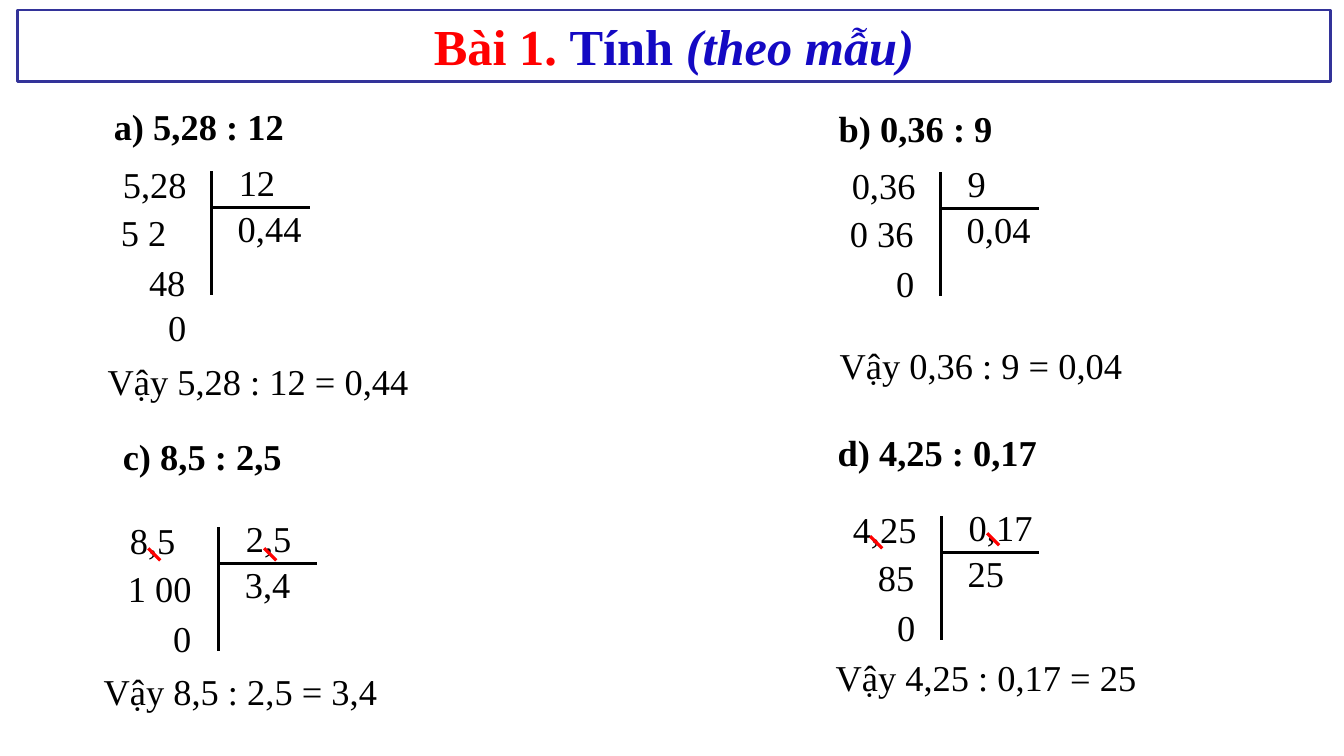
from lxml.etree import SubElement
from pptx import Presentation
from pptx.dml.color import RGBColor
from pptx.enum.shapes import MSO_CONNECTOR
from pptx.enum.text import MSO_ANCHOR, MSO_AUTO_SIZE, PP_ALIGN
from pptx.oxml.ns import qn
from pptx.util import Inches, Pt

FONT = "Times New Roman"
COLORS = {"ink": "000000", "red": "FF0000", "blue": "1409C3",
          "frame": "333399", "white": "FFFFFF"}

# Offsets from the top of the upright bar
ROW_TOPS = (0.34, 0.83, 1.28)
BAR_LONG, BAR_WIDE, BAR_DROP = 1.23, 0.97, 0.36
TICK = 0.12

# Each sum: heading, bar top, dividend, divisor, quotient,
# rows (text, offset from bar), ticks (offsets from bar), answer
SUMS = [
    {"head": ("a) 5,28 : 12", 1.03, 0.98, 3.45), "bar": (2.1, 1.7),
     "parts": ("5,28", "12", "0,44"),
     "rows": [("5 2", -1.0), ("48", -0.72), ("0", -0.53)], "ticks": [],
     "answer": ("Vậy 5,28 : 12 = 0,44", 0.97, 3.51)},
    {"head": ("b) 0,36 : 9", 8.22, 1.0, 3.05), "bar": (9.33, 1.71),
     "parts": ("0,36", "9", "0,04"),
     "rows": [("0 36", -1.0), ("0", -0.54)], "ticks": [],
     "answer": ("Vậy 0,36 : 9 = 0,04", 8.23, 3.36)},
    {"head": ("c) 8,5 : 2,5", 1.12, 4.26, 3.18), "bar": (2.17, 5.23),
     "parts": ("8,5", "2,5", "3,4"),
     "rows": [("1 00", -1.0), ("0", -0.55)],
     "ticks": [(-0.7, 0.21), (0.45, 0.21)],
     "answer": ("Vậy 8,5 : 2,5 = 3,4", 0.93, 6.59)},
    {"head": ("d) 4,25 : 0,17", 8.21, 4.22, 3.86), "bar": (9.34, 5.12),
     "parts": ("4,25", "0,17", "25"),
     "rows": [("85", -0.73), ("0", -0.54)],
     "ticks": [(-0.71, 0.2), (0.45, 0.17)],
     "answer": ("Vậy 4,25 : 0,17 = 25", 8.19, 6.45)},
]


def color(name):
    return RGBColor.from_string(COLORS[name])


def add_text(slide, text, left, top, width=1.13, bold=False):
    box = slide.shapes.add_textbox(Inches(left), Inches(top),
                                   Inches(width), Inches(0.54))
    frame = box.text_frame
    frame.word_wrap = True
    para = frame.paragraphs[0]
    para.text = text
    para.font.name = FONT
    para.font.size = Pt(26)
    para.font.bold = bold
    para.font.color.rgb = color("ink")


def add_line(slide, left, top, wide, high, tint="ink"):
    line = slide.shapes.add_connector(
        MSO_CONNECTOR.STRAIGHT, Inches(left), Inches(top),
        Inches(left + wide), Inches(top + high))
    line.line.color.rgb = color(tint)
    line.line.width = Pt(2.25)
    SubElement(line._element.spPr, qn("a:effectLst"))


def add_title(slide):
    title = slide.shapes.title
    title.left, title.top = Inches(0.17), Inches(0.1)
    title.width, title.height = Inches(13.03), Inches(0.71)
    title.fill.solid()
    title.fill.fore_color.rgb = color("white")
    title.line.color.rgb = color("frame")
    title.line.width = Pt(2)
    frame = title.text_frame
    frame.auto_size = MSO_AUTO_SIZE.NONE
    frame.vertical_anchor = MSO_ANCHOR.MIDDLE
    para = frame.paragraphs[0]
    para.alignment = PP_ALIGN.CENTER
    para.font.name = FONT
    para.font.size = Pt(36)
    para.font.bold = True
    for text, tint, slant in (("Bài 1. ", "red", False),
                              ("Tính ", "blue", False),
                              ("(theo mẫu)", "blue", True)):
        run = para.add_run()
        run.text = text
        run.font.color.rgb = color(tint)
        run.font.italic = slant


def add_sum(slide, item):
    text, left, top, width = item["head"]
    add_text(slide, text, left, top, width, bold=True)

    # Long division: numbers, remainders, bars
    x, y = item["bar"]
    places = ((-0.98, -0.14), (0.17, -0.16), (0.16, 0.3))
    for text, (dx, dy) in zip(item["parts"], places):
        add_text(slide, text, x + dx, y + dy)
    for (text, dx), dy in zip(item["rows"], ROW_TOPS):
        add_text(slide, text, x + dx, y + dy)
    add_line(slide, x, y, 0, BAR_LONG)
    add_line(slide, x, y + BAR_DROP, BAR_WIDE, 0)

    # Struck-out commas
    for dx, dy in item["ticks"]:
        add_line(slide, x + dx, y + dy, TICK, TICK, "red")

    text, left, top = item["answer"]
    add_text(slide, text, left, top, 3.94)


def main():
    deck = Presentation()
    deck.slide_width, deck.slide_height = Inches(13.33), Inches(7.5)
    slide = deck.slides.add_slide(deck.slide_layouts[5])
    add_title(slide)
    for item in SUMS:
        add_sum(slide, item)
    deck.save("out.pptx")


if __name__ == "__main__":
    main()
